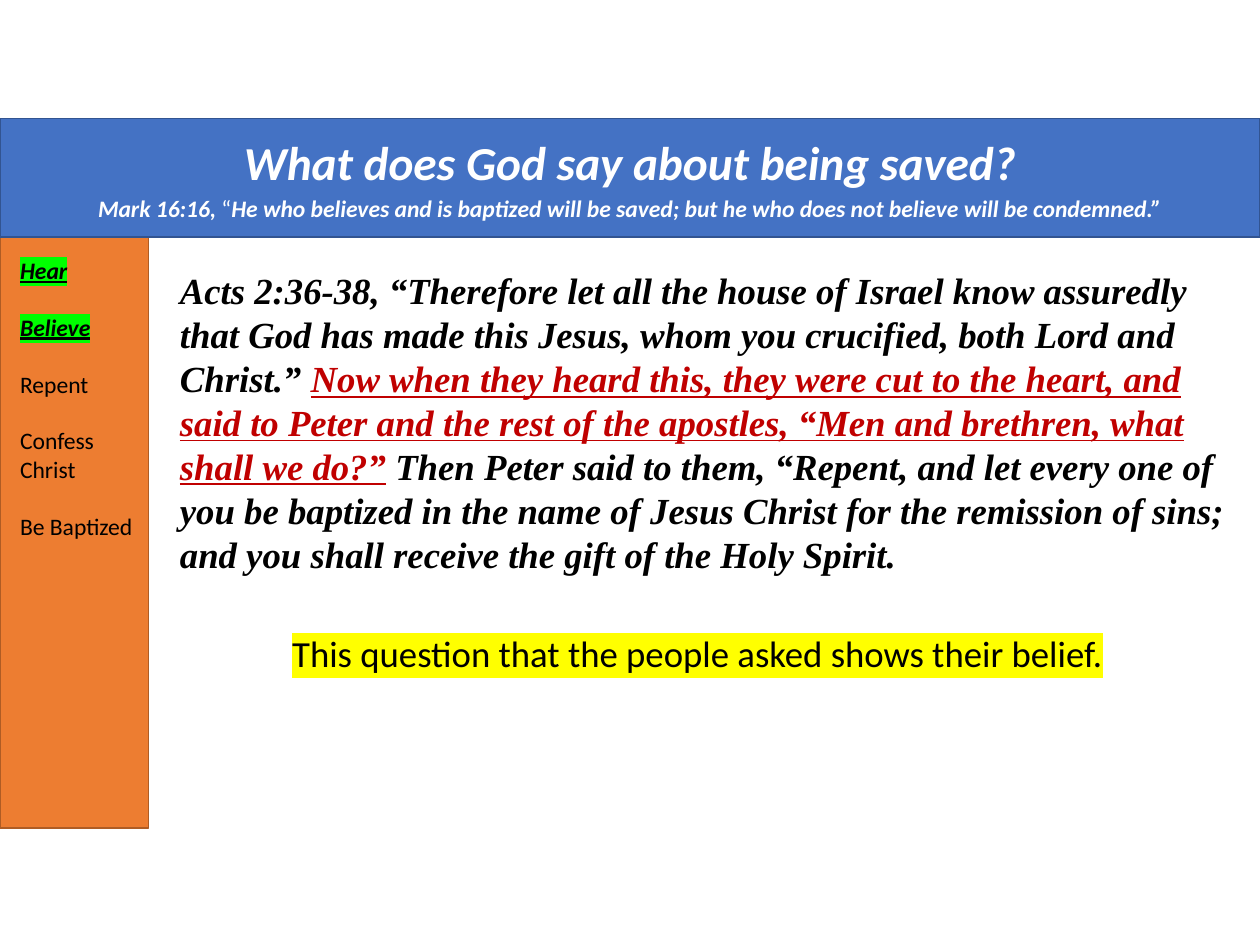
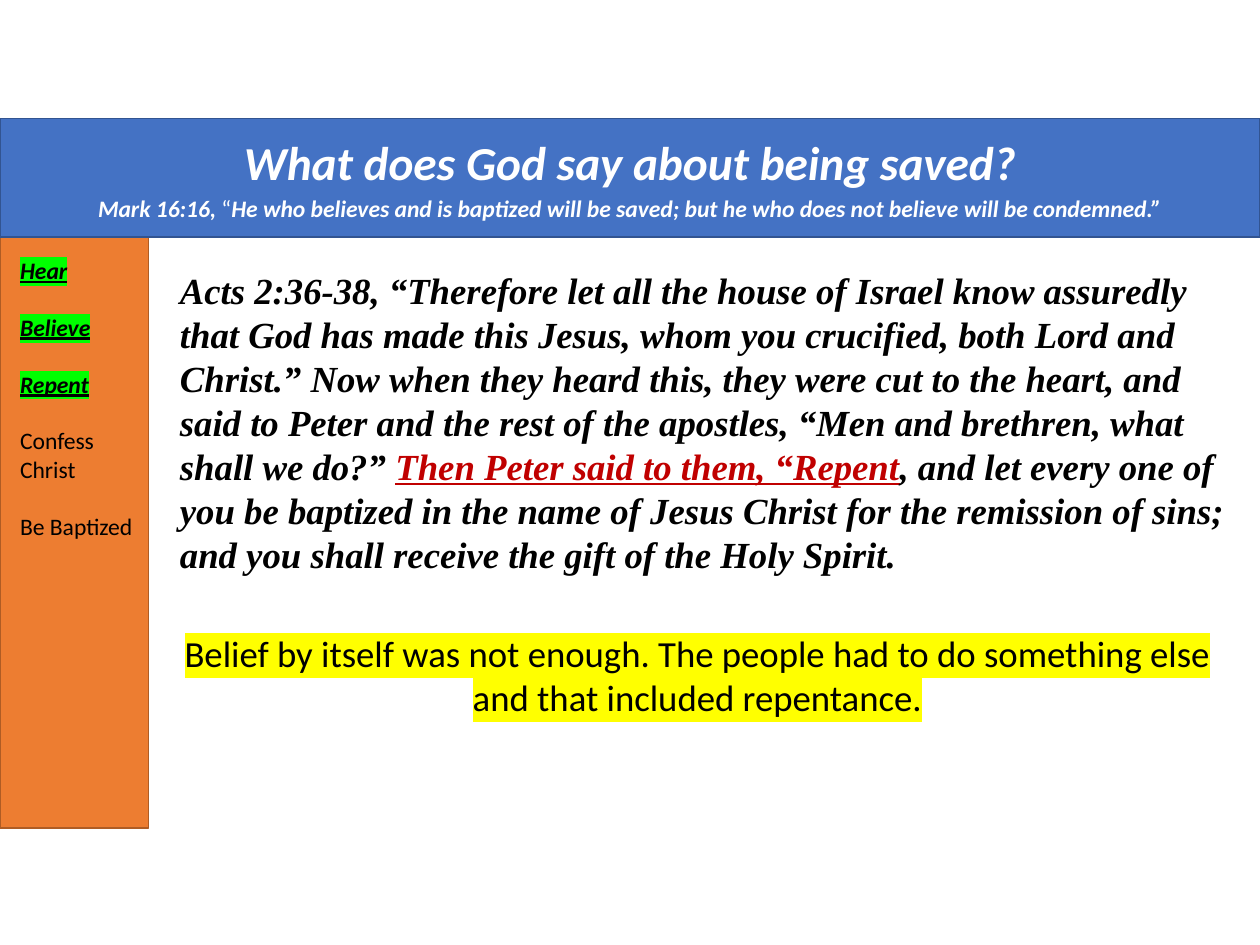
from pptx import Presentation
from pptx.dml.color import RGBColor
from pptx.enum.shapes import MSO_SHAPE
from pptx.enum.text import MSO_ANCHOR, MSO_AUTO_SIZE, PP_ALIGN
from pptx.oxml.ns import qn
from pptx.util import Inches, Pt
from lxml.etree import SubElement

# Shared look
BLUE = RGBColor(0x44, 0x72, 0xC4)
NAVY = RGBColor(0x32, 0x54, 0x91)
ORANGE = RGBColor(0xED, 0x7D, 0x31)
BROWN = RGBColor(0xAF, 0x5C, 0x24)
GREEN = RGBColor(0x00, 0xFF, 0x00)
YELLOW = RGBColor(0xFF, 0xFF, 0x00)
RED = RGBColor(0xC0, 0x00, 0x00)
BLACK = RGBColor(0x00, 0x00, 0x00)
WHITE = RGBColor(0xFF, 0xFF, 0xFF)
SANS, SERIF = "Calibri", "Times New Roman"

# Boxes: left, top, width, height in inches
BAND = (0, 0.94, 10, 0.94)
SIDE = (0, 1.88, 1.18, 4.69)
MAIN = (1.33, 2.08, 8.67, 2.57)

# Shared wording
TITLE = "What does God say about being saved?"
VERSE = ("Mark 16:16, ", "“", "He who believes and is baptized will be saved; "
         "but he who does not believe will be condemned.”")
STEPS = ("Hear", "Believe", "Repent", "Confess Christ", "Be Baptized")
PASSAGE = (
    "Acts 2:36-38, “Therefore let all the house of Israel know assuredly that "
    "God has made this Jesus, whom you crucified, both Lord and Christ.” "
    "Now when they heard this, they were cut to the heart, and said to Peter "
    "and the rest of the apostles, “Men and brethren, what shall we do?” "
    "Then Peter said to them, “Repent, and let every one of you be baptized "
    "in the name of Jesus Christ for the remission of sins; and you shall "
    "receive the gift of the Holy Spirit.")

# Per slide: steps reached, words marked in the passage, note, note height
PAGES = (
    (2, "Now when they heard this, they were cut to the heart, and said to "
        "Peter and the rest of the apostles, “Men and brethren, what shall "
        "we do?”",
     "This question that the people asked shows their belief.", 0.45),
    (3, "Then Peter said to them, “Repent",
     "Belief by itself was not enough. The people had to do something else "
     "and that included repentance.", 0.81),
)


def place(shape, left, top, width, height):
    shape.left, shape.top = Inches(left), Inches(top)
    shape.width, shape.height = Inches(width), Inches(height)


def paint(shape, fill, line):
    shape.fill.solid()
    shape.fill.fore_color.rgb = fill
    shape.line.color.rgb = line
    shape.line.width = Pt(1)


def style(run, size, color=BLACK, face=SANS, strong=False, under=False, mark=None):
    font = run.font
    font.size, font.name = Pt(size), face
    font.bold = font.italic = strong
    font.underline = under
    font.color.rgb = color
    if mark is not None:
        fill = run._r.rPr.find(qn("a:solidFill"))
        light = SubElement(run._r.rPr, qn("a:highlight"))
        SubElement(light, qn("a:srgbClr"), val=str(mark))
        fill.addnext(light)


def add_run(para, text, *args, **kw):
    run = para.add_run()
    run.text = text
    style(run, *args, **kw)


def add_text(slide, box):
    shape = slide.shapes.add_textbox(*map(Inches, box))
    shape.text_frame.word_wrap = True
    return shape.text_frame


# Heading band with the key verse
def add_band(slide, box):
    band = slide.shapes.title
    place(band, *box)
    paint(band, BLUE, NAVY)
    slide.shapes._spTree.append(band._element)
    frame = band.text_frame
    frame.auto_size = MSO_AUTO_SIZE.NONE
    frame.vertical_anchor = MSO_ANCHOR.MIDDLE
    frame.text = TITLE
    head, verse = frame.paragraphs[0], frame.add_paragraph()
    head.alignment = verse.alignment = PP_ALIGN.CENTER
    style(head.runs[0], 27, WHITE, strong=True)
    verse.space_before = Pt(2.7)
    for part in VERSE:
        add_run(verse, part, 13.5, WHITE, strong=part != "“")


# Side bar listing the steps, those reached marked
def add_side(slide, box, reached):
    left, top, width, height = box
    bar = slide.shapes.add_shape(MSO_SHAPE.RECTANGLE, *map(Inches, box))
    bar.shadow.inherit = False
    paint(bar, ORANGE, BROWN)
    slide.shapes._spTree.insert(2, bar._element)
    body = slide.placeholders[1]
    place(body, left + 0.06, top + 0.1, width - 0.06, 2.37)
    frame = body.text_frame
    frame.auto_size = MSO_AUTO_SIZE.NONE
    frame.text = "\n".join(STEPS)
    for i, para in enumerate(frame.paragraphs):
        props = para._p.get_or_add_pPr()
        props.set("marL", "0")
        props.set("indent", "0")
        para.space_before = Pt(16.3 if i else 0)
        SubElement(props, qn("a:buNone"))
        done = i < reached
        style(para.runs[0], 13.5, strong=done, under=done,
              mark=GREEN if done else None)


# Passage with its marked words, and the note below
def add_main(slide, box, marked, note, tall):
    left, top, width, height = box
    para = add_text(slide, box).paragraphs[0]
    para.line_spacing = Pt(25.1)
    for part in PASSAGE.partition(marked):
        hit = part == marked
        add_run(para, part, 21, RED if hit else BLACK, SERIF, True, hit)
    frame = add_text(slide, (left, top + 2.88, width - 0.26, tall))
    frame.text = note
    frame.paragraphs[0].alignment = PP_ALIGN.CENTER
    style(frame.paragraphs[0].runs[0], 21, mark=YELLOW)


def main():
    deck = Presentation()
    deck.slide_width, deck.slide_height = Inches(10), Inches(7.5)
    for reached, marked, note, tall in PAGES:
        slide = deck.slides.add_slide(deck.slide_layouts[1])
        add_side(slide, SIDE, reached)
        add_main(slide, MAIN, marked, note, tall)
        add_band(slide, BAND)
    deck.save("out.pptx")


if __name__ == "__main__":
    main()
